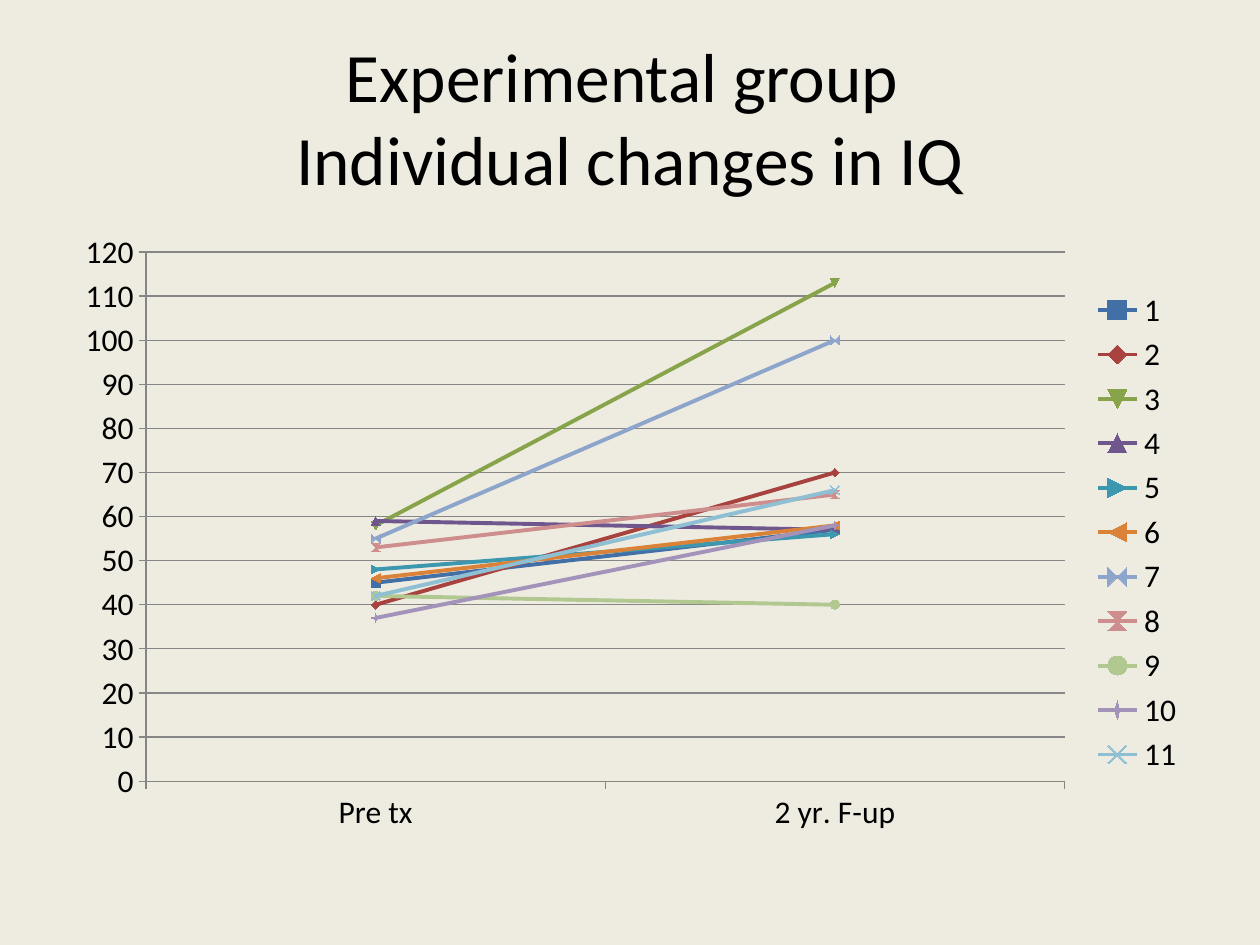
from pptx import Presentation
from pptx.chart.data import CategoryChartData
from pptx.dml.color import RGBColor
from pptx.enum.chart import XL_CHART_TYPE, XL_LEGEND_POSITION, XL_TICK_MARK
from pptx.enum.text import MSO_ANCHOR, PP_ALIGN
from pptx.util import Pt

CATEGORIES = ["Pre tx", "2 yr. F-up"]
# One row per participant: IQ before treatment, IQ at follow-up, line colour
PARTICIPANTS = [
    (45, 57, "426FA6"), (40, 70, "A8423F"), (58, 113, "87A44B"),
    (59, 57, "6F568D"), (48, 56, "3D97AF"), (46, 58, "DA8238"),
    (55, 100, "8EA5CB"), (53, 65, "CE8E8D"), (42, 40, "B2C891"),
    (37, 58, "A393BB"), (42, 66, "8EBFD2"),
]


def rgb(hex_color):
    return RGBColor.from_string(hex_color)


class Slide:
    font = "Calibri"
    text_color = "000000"
    background = "EEECE1"
    grid_color = "868686"

    def __init__(self, prs):
        self.s = prs.slides.add_slide(prs.slide_layouts[5])
        fill = self.s.background.fill
        fill.solid()
        fill.fore_color.rgb = rgb(self.background)

    def style_font(self, font, size):
        font.name = self.font
        font.size = Pt(size)
        font.color.rgb = rgb(self.text_color)

    def style_line(self, line, color, width):
        line.color.rgb = rgb(color)
        line.width = Pt(width)

    def title(self, text, left, top, width, height, size):
        sp = self.s.shapes.title
        sp.left, sp.top, sp.width, sp.height = map(Pt, (left, top, width, height))
        tf = sp.text_frame
        tf.text = text
        tf.vertical_anchor = MSO_ANCHOR.MIDDLE
        p = tf.paragraphs[0]
        p.alignment = PP_ALIGN.CENTER
        self.style_font(p.font, size)

    def line_chart(self, categories, rows, left, top, width, height, size):
        data = CategoryChartData()
        data.categories = categories
        for number, (before, after, _) in enumerate(rows, 1):
            data.add_series(str(number), (before, after))
        chart = self.s.shapes.add_chart(
            XL_CHART_TYPE.LINE_MARKERS, *map(Pt, (left, top, width, height)), data
        ).chart
        self.style_font(chart.font, size)
        chart.has_title = False
        chart.has_legend = True
        chart.legend.position = XL_LEGEND_POSITION.RIGHT
        chart.legend.include_in_layout = False

        for axis in (chart.category_axis, chart.value_axis):
            axis.major_tick_mark = XL_TICK_MARK.OUTSIDE
            axis.minor_tick_mark = XL_TICK_MARK.NONE
            self.style_line(axis.format.line, self.grid_color, 0.75)
        axis = chart.value_axis
        axis.minimum_scale, axis.maximum_scale, axis.major_unit = 0, 120, 10
        axis.has_major_gridlines = True
        self.style_line(axis.major_gridlines.format.line, self.grid_color, 0.75)

        for series, (_, _, color) in zip(chart.plots[0].series, rows):
            series.smooth = False
            self.style_line(series.format.line, color, 2.25)
            marker = series.marker.format
            marker.fill.solid()
            marker.fill.fore_color.rgb = rgb(color)
            self.style_line(marker.line, color, 0.75)


def main():
    prs = Presentation()
    prs.slide_width, prs.slide_height = Pt(720), Pt(540)
    slide = Slide(prs)
    slide.title("Experimental group \vIndividual changes in IQ", 36, 21.6, 648, 90, 39.6)
    slide.line_chart(CATEGORIES, PARTICIPANTS, 36, 126, 648, 356.4, 18)
    prs.save("out.pptx")


if __name__ == "__main__":
    main()
